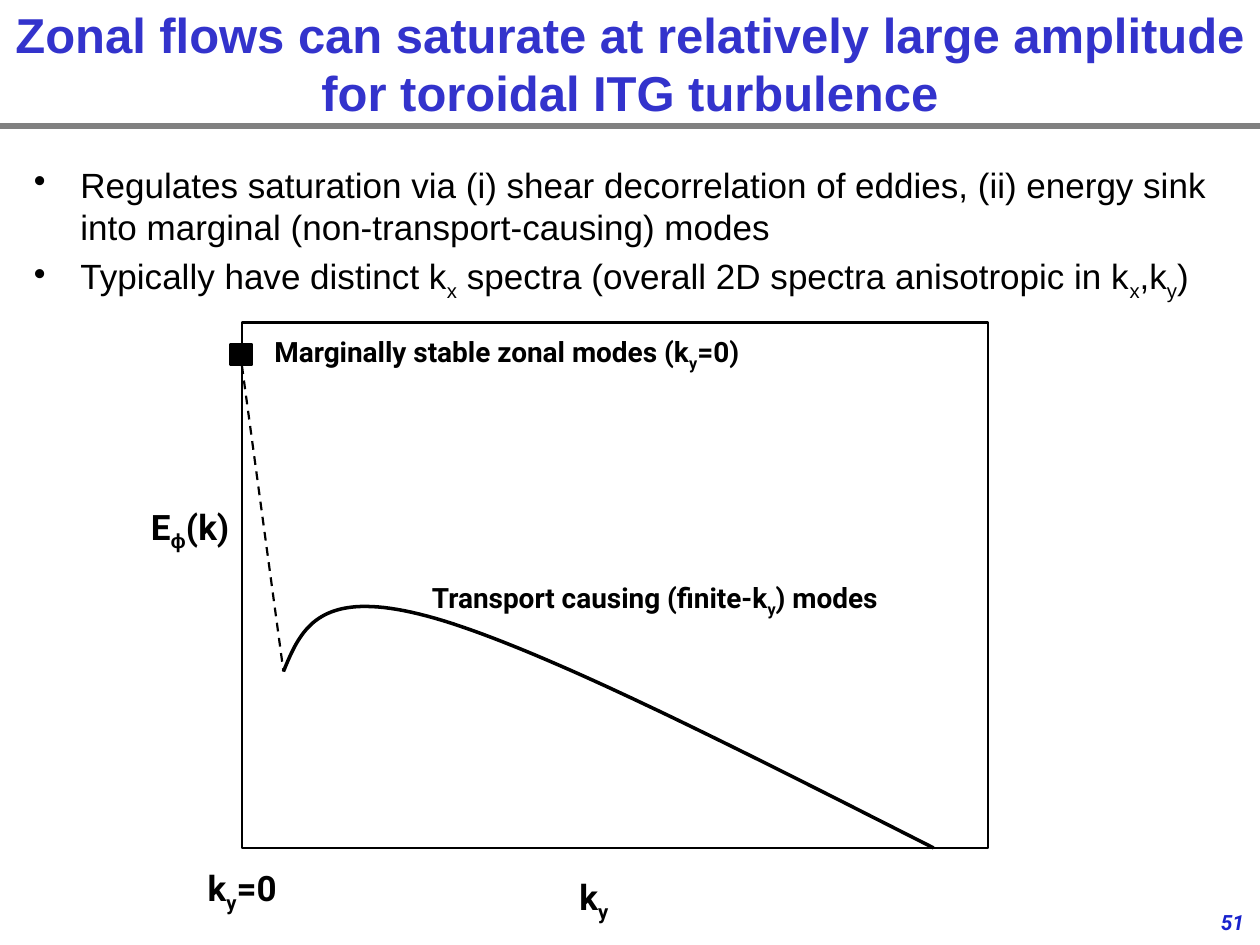
from dataclasses import dataclass

from lxml.etree import SubElement
from pptx import Presentation
from pptx.dml.color import RGBColor as Color
from pptx.enum.dml import MSO_LINE as Dash
from pptx.enum.shapes import MSO_CONNECTOR as Connector, MSO_SHAPE as Shape
from pptx.enum.text import MSO_ANCHOR as Anchor, PP_ALIGN as Align
from pptx.oxml.ns import qn
from pptx.util import Pt

PX = 9144


@dataclass(frozen=True)
class Theme:
    ink: Color = Color.from_string("000000")
    title: Color = Color.from_string("3333CC")
    number: Color = Color.from_string("1822CD")
    rule: Color = Color.from_string("808080")
    body_font: str = "Arial"
    label_font: str = "Roboto"
    title_size: int = 28
    body_size: int = 20
    label_size: int = 16
    number_size: int = 12
    thin: float = 1.25
    curve: float = 2
    thick: float = 3


THEME = Theme()


def add_box(page, box, wrap=True):
    frame = page.shapes.add_textbox(*(PX * length for length in box)).text_frame
    frame.word_wrap = wrap
    return frame


def fill_para(para, text, font, size, color=THEME.ink, bold=False, italic=False):
    para.font.name = font
    para.font.size = Pt(size)
    para.font.color.rgb = color
    para.font.bold = bold
    para.font.italic = italic
    for index, piece in enumerate(text.split("_")):
        span = para.add_run()
        span.text = piece
        if index % 2:
            span.font._element.set("baseline", "-25000")
        if piece == "ϕ":
            span.font.name = THEME.body_font


def add_label(page, box, text, size):
    para = add_box(page, box, wrap=False).paragraphs[0]
    fill_para(para, text, THEME.label_font, size, bold=True)


def add_line(page, start, end, color, width, dash=None):
    points = (PX * length for length in (*start, *end))
    line = page.shapes.add_connector(Connector.STRAIGHT, *points)
    line.line.color.rgb = color
    line.line.width = Pt(width)
    if dash:
        line.line.dash_style = dash
    SubElement(line._element.spPr, qn("a:effectLst"))


def style_outline(shape, width, filled=False):
    shape.shadow.inherit = False
    if filled:
        shape.fill.solid()
        shape.fill.fore_color.rgb = THEME.ink
    else:
        shape.fill.background()
    shape.line.color.rgb = THEME.ink
    shape.line.width = Pt(width)


def add_rectangle(page, box, filled=False):
    shape = page.shapes.add_shape(Shape.RECTANGLE, *(PX * length for length in box))
    style_outline(shape, THEME.thin, filled)


def cubic_points(start, control_1, control_2, end, steps=40):
    for step in range(1, steps + 1):
        t = step / steps
        weights = ((1 - t) ** 3, 3 * t * (1 - t) ** 2, 3 * t * t * (1 - t), t ** 3)
        corners = (start, control_1, control_2, end)
        yield tuple(
            round(PX * sum(w * corner[axis] for w, corner in zip(weights, corners)))
            for axis in (0, 1)
        )


def add_curve(page, knots):
    builder = page.shapes.build_freeform(PX * knots[0][0], PX * knots[0][1])
    for first in range(0, len(knots) - 1, 3):
        builder.add_line_segments(cubic_points(*knots[first:first + 4]), close=False)
    style_outline(builder.convert_to_shape(), THEME.curve)


def add_title(page, box, text):
    left, top, width, height = box
    add_line(page, (left, top + height), (left + width, top + height),
             THEME.rule, THEME.thick)
    frame = add_box(page, box)
    frame.vertical_anchor = Anchor.MIDDLE
    para = frame.paragraphs[0]
    para.alignment = Align.CENTER
    fill_para(para, text, THEME.body_font, THEME.title_size, THEME.title, bold=True)


def add_bullets(page, box, items):
    frame = add_box(page, box)
    for index, text in enumerate(items):
        para = frame.add_paragraph() if index else frame.paragraphs[0]
        properties = para._p.get_or_add_pPr()
        properties.set("marL", str(37 * PX))
        properties.set("indent", str(-37 * PX))
        SubElement(properties, qn("a:buChar"), char="•")
        para.space_before = Pt(4 if index else 0)
        fill_para(para, text, THEME.body_font, THEME.body_size)


def add_spectrum(page, box):
    left, top, width, height = box

    def at(x, y):
        return left + x, top + y

    add_rectangle(page, box)
    curve = [(33, 277), (47, 243), (61, 210), (147, 233),
             (233, 256), (391, 337), (549, height)]
    add_curve(page, [at(*knot) for knot in curve])
    add_rectangle(page, (*at(-9, 17), 17, 17), filled=True)
    add_line(page, at(0, 34), at(*curve[0]), THEME.ink, THEME.thin, Dash.DASH)

    labels = [
        (258, 434, 46, 44, "k_y", THEME.body_size),
        (-82, 140, 84, 44, "E_ϕ_(k)", THEME.body_size),
        (141, 200, 397, 37, "Transport causing (finite-k_y_) modes", THEME.label_size),
        (16, 5, 412, 37, "Marginally stable zonal modes (k_y_=0)", THEME.label_size),
        (-37, 427, 78, 44, "k_y_=0", THEME.body_size),
    ]
    for x, y, label_width, label_height, text, size in labels:
        add_label(page, (*at(x, y), label_width, label_height), text, size)


def add_page_number(page, box, text):
    para = add_box(page, box, wrap=False).paragraphs[0]
    fill_para(para, text, THEME.label_font, THEME.number_size, THEME.number,
              bold=True, italic=True)


def main():
    deck = Presentation()
    deck.slide_width, deck.slide_height = 1000 * PX, 750 * PX
    page = deck.slides.add_slide(deck.slide_layouts[6])
    add_title(page, (0, 0, 1000, 100),
              "Zonal flows can saturate at relatively large amplitude "
              "for toroidal ITG turbulence")
    add_bullets(page, (17, 125, 958, 50), [
        "Regulates saturation via (i) shear decorrelation of eddies, "
        "(ii) energy sink into marginal (non-transport-causing) modes",
        "Typically have distinct k_x_ spectra "
        "(overall 2D spectra anisotropic in k_x_,k_y_)",
    ])
    add_spectrum(page, (192, 256, 592, 417))
    add_page_number(page, (959, 717, 41, 30), "51")
    deck.save("out.pptx")


if __name__ == "__main__":
    main()
